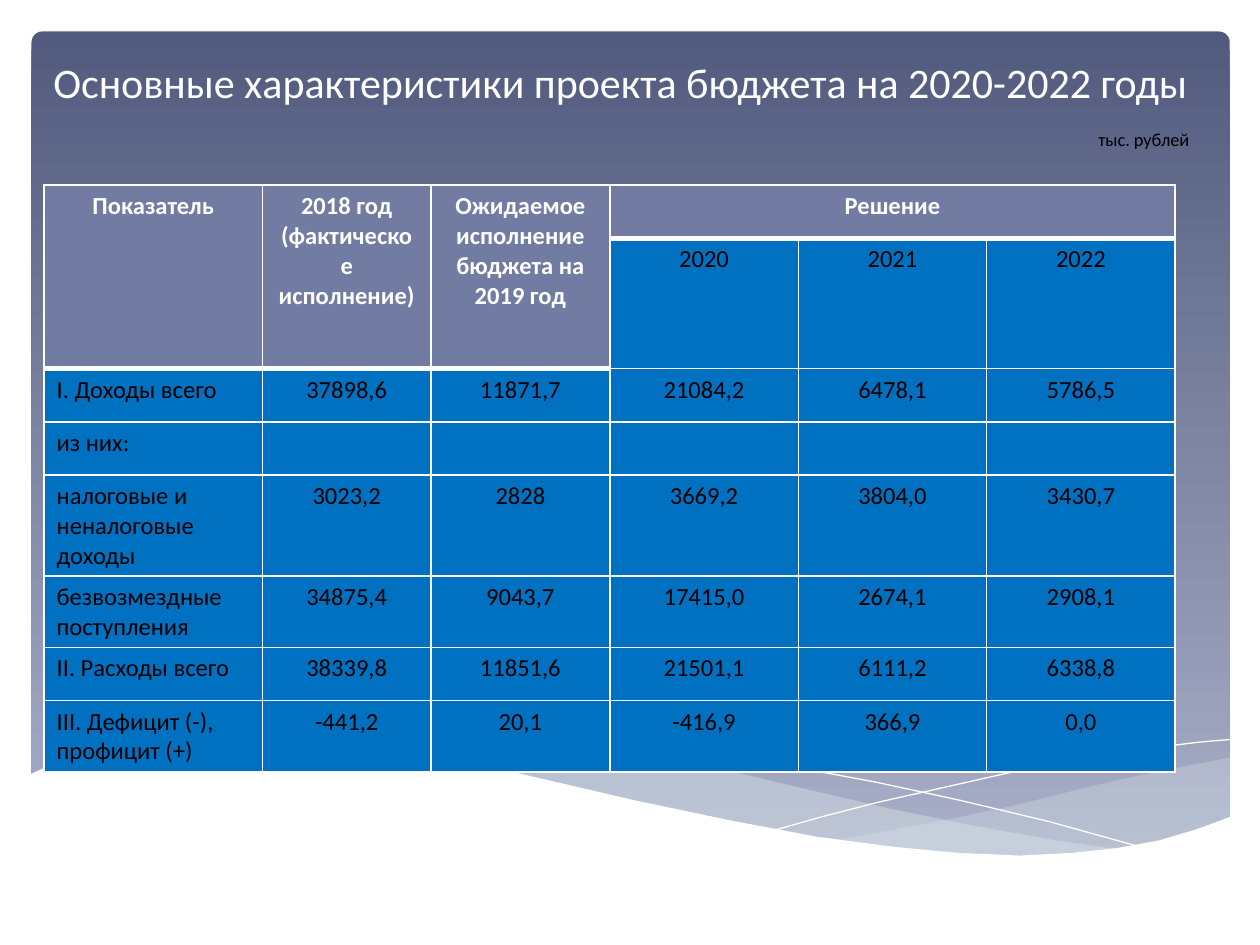
from lxml import etree
from pptx import Presentation
from pptx.dml.color import RGBColor
from pptx.enum import shapes, text
from pptx.oxml import ns
from pptx.util import Pt

WHITE = RGBColor(0xFF, 0xFF, 0xFF)
BLACK = RGBColor(0x00, 0x00, 0x00)
DEEP_SLATE = RGBColor(0x52, 0x5B, 0x7E)
PALE_SLATE = RGBColor(0xAA, 0xB0, 0xC8)
MIST = RGBColor(0xDD, 0xE9, 0xEC)
HEADER = RGBColor(0x72, 0x7C, 0xA3)
BLUE = RGBColor(0x00, 0x70, 0xC0)

# Wave outlines in points: points, filled or not, opacity in percent
RIGHT_RIBBON = [
    (703.4, 432.7), (673.9, 438.5), (642.2, 445), (620.6, 450), (580.3, 460.1),
    (542.9, 468), (509, 474.5), (476.6, 480.2), (508.3, 484.6), (537.1, 487.4),
    (563, 488.9), (586.8, 489.6), (608.4, 488.9), (628.6, 486.7), (646.6, 483.8),
    (663.8, 480.2), (679.7, 475.9), (694.1, 470.9), (703.4, 467.3)]
LONG_RIBBON = [
    (643.7, 486), (603.4, 480.2), (558.7, 472.3), (509, 462.2), (453.6, 449.3),
    (420.5, 441.4), (390.2, 434.9), (361.4, 430.6), (334.8, 427), (302.4, 424.1),
    (273.6, 422.6), (248.4, 423.4), (226.1, 424.8), (206.6, 427), (247, 432.7),
    (291.6, 441.4), (324, 449.3), (381.6, 462.2), (433.4, 473), (479.5, 481),
    (520.6, 486.7), (557.3, 488.9), (589.7, 489.6), (618.5, 488.9)]
FALLING_LINE = [
    (223.2, 429.8), (235, 428), (261.4, 424.8), (289.4, 424.1), (324.7, 424.1),
    (352.1, 426.2), (383.8, 429.1), (419, 433.4), (458.6, 439.2), (501.1, 447.1),
    (547.9, 457.2), (599, 469.4), (653.8, 484.6)]
RISING_LINE = [
    (442.1, 474.5), (470.2, 466.6), (501.1, 458.6), (539.3, 450), (581, 440.6),
    (624.2, 432), (655.9, 427.7), (685.4, 424.1), (702.7, 422.6)]
WHITE_WAVE = [
    (703.4, 466.6), (684, 473.8), (662.4, 480.2), (638.6, 484.6), (612, 487.4),
    (582.5, 488.9), (547.9, 487.4), (509.8, 483.8), (466.6, 478.1), (416.9, 468.7),
    (362.2, 457.2), (321.8, 447.8), (281.5, 438.5), (244.8, 431.3), (210.2, 426.2),
    (180, 423.4), (151.9, 421.9), (127.4, 421.9), (105.1, 422.6), (85.7, 424.1),
    (68.4, 427), (54.7, 429.8), (42.5, 432.7), (33.1, 435.6), (25.9, 438.5),
    (16.6, 442.8), (16.6, 526.3), (703.4, 526.3)]
WAVES = [(RIGHT_RIBBON, MIST, 29), (LONG_RIBBON, MIST, 40), (FALLING_LINE, None, 100),
         (RISING_LINE, None, 100), (WHITE_WAVE, WHITE, 100)]

ROWS = [
    ["Показатель", "2018 год (фактическое исполнение)",
     "Ожидаемое исполнение бюджета на 2019 год", "Решение", "", ""],
    ["", "", "", "2020", "2021", "2022"],
    ["I. Доходы всего", "37898,6", "11871,7", "21084,2", "6478,1", "5786,5"],
    ["из них:", "", "", "", "", ""],
    ["налоговые и неналоговые доходы", "3023,2", "2828", "3669,2", "3804,0", "3430,7"],
    ["безвозмездные поступления", "34875,4", "9043,7", "17415,0", "2674,1", "2908,1"],
    ["II. Расходы всего", "38339,8", "11851,6", "21501,1", "6111,2", "6338,8"],
    ["III. Дефицит (-), профицит (+)", "-441,2", "20,1", "-416,9", "366,9", "0,0"],
]
COLUMN_WIDTHS = [124.8, 96.3, 102.2, 107.7, 107.7, 107.7]


def write(frame, words, size, color, align, bold=False):
    para = frame.paragraphs[0]
    para.text = words
    para.alignment = align
    para.font.name = "Calibri"
    para.font.size = Pt(size)
    para.font.bold = bold
    para.font.color.rgb = color


def add_border(cell, side, width):
    """Add a white border to one side (L, R, T or B); call before the cell is filled."""
    line = etree.SubElement(cell._tc.get_or_add_tcPr(), ns.qn(f"a:ln{side}"), w=str(Pt(width)))
    fill = etree.SubElement(line, ns.qn("a:solidFill"))
    etree.SubElement(fill, ns.qn("a:srgbClr"), val=str(WHITE))


deck = Presentation()
deck.slide_width, deck.slide_height = Pt(720), Pt(540)
page = deck.slides.add_slide(deck.slide_layouts[6])

# Backdrop
panel = page.shapes.add_shape(shapes.MSO_SHAPE.ROUNDED_RECTANGLE,
                              Pt(18), Pt(18), Pt(684.7), Pt(475.2))
panel.adjustments[0] = 0.013
panel.shadow.inherit = False
panel.line.fill.background()
panel.fill.gradient()
panel.fill.gradient_angle = 270
for stop, color, position in zip(panel.fill.gradient_stops, (DEEP_SLATE, PALE_SLATE), (0, 1)):
    stop.color.rgb = color
    stop.position = position

for points, color, opacity in WAVES:
    corners = [(Pt(x), Pt(y)) for x, y in points]
    builder = page.shapes.build_freeform(*corners[0])
    builder.add_line_segments(corners[1:], close=color is not None)
    wave = builder.convert_to_shape()
    wave.shadow.inherit = False
    if color is None:
        wave.fill.background()
        wave.line.color.rgb = WHITE
        wave.line.width = Pt(0)
        continue
    wave.line.fill.background()
    wave.fill.solid()
    wave.fill.fore_color.rgb = color
    if opacity < 100:
        shade = wave._element.spPr.find(".//" + ns.qn("a:srgbClr"))
        etree.SubElement(shade, ns.qn("a:alpha"), val=str(opacity * 1000))

# Title
title = page.shapes.add_textbox(Pt(14.4), Pt(25.9), Pt(680.4), Pt(38.9)).text_frame
title.word_wrap = True
title.vertical_anchor = text.MSO_ANCHOR.BOTTOM
write(title, "Основные характеристики проекта бюджета на 2020-2022 годы",
      24, WHITE, text.PP_ALIGN.CENTER)

# Budget table
table_frame = page.shapes.add_table(len(ROWS), len(COLUMN_WIDTHS),
                                    Pt(25.2), Pt(105.8), Pt(646.4), Pt(305.3))
table = table_frame.table
for column, width in zip(table.columns, COLUMN_WIDTHS):
    column.width = Pt(width)
for row in table.rows:
    row.height = Pt(30.4)
table_frame.height = Pt(305.3)
for c in range(3):
    table.cell(0, c).merge(table.cell(1, c))
table.cell(0, 3).merge(table.cell(0, 5))

for r, words_in_row in enumerate(ROWS):
    for c, words in enumerate(words_in_row):
        cell = table.cell(r, c)
        is_header = r == 0 or (r == 1 and c < 3)
        below_header = r == (2 if c < 3 else 1)
        for side, width in (("L", 1), ("R", 1), ("T", 3 if below_header else 1),
                            ("B", 3 if is_header else 1)):
            add_border(cell, side, width)
        cell.fill.solid()
        cell.fill.fore_color.rgb = HEADER if is_header else BLUE
        is_label = c == 0 and not is_header
        write(cell.text_frame, words, 14, WHITE if is_header else BLACK,
              text.PP_ALIGN.LEFT if is_label else text.PP_ALIGN.CENTER, is_header)

# Unit of measure
unit = page.shapes.add_textbox(Pt(620.6), Pt(69.8), Pt(90.7), Pt(20.2)).text_frame
unit.word_wrap = True
write(unit, "тыс. рублей", 10.5, BLACK, text.PP_ALIGN.LEFT)

deck.save("out.pptx")
